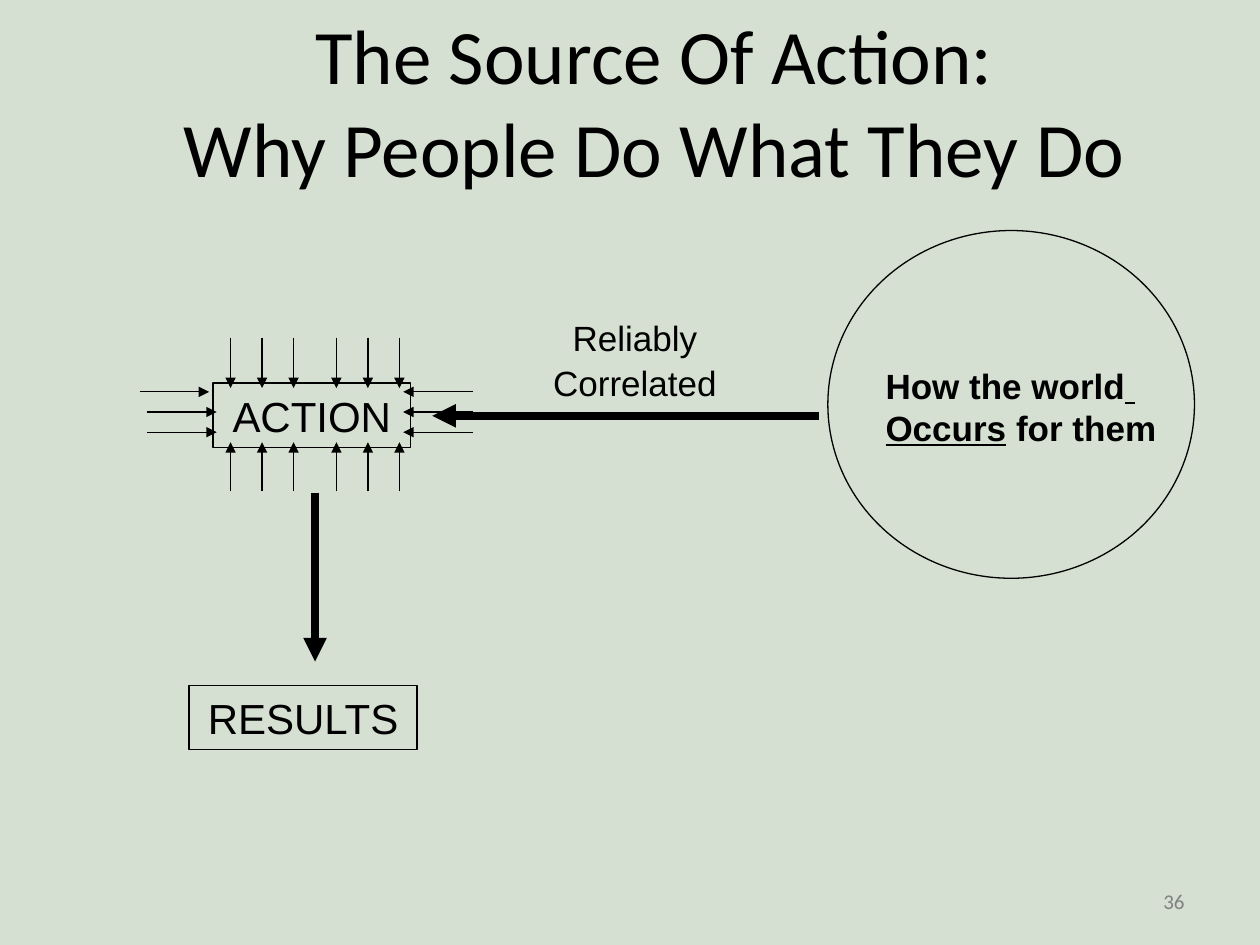
from lxml import etree
from pptx import Presentation
from pptx.dml.color import RGBColor
from pptx.enum import shapes, text
from pptx.oxml.ns import qn
from pptx.util import Inches, Pt

BLACK = "000000"
GREY = "808080"
BACKGROUND = "D5E0D2"
CENTER = text.PP_ALIGN.CENTER


def color(value):
    return RGBColor.from_string(value)


def place(left, top, width, height):
    return [Inches(value) for value in (left, top, width, height)]


def write(box, lines, size, font="Arial", ink=BLACK, align=CENTER,
          anchor=text.MSO_ANCHOR.MIDDLE):
    """Fill a box with one paragraph a line, all in one format."""
    frame = box.text_frame
    frame.word_wrap = True
    frame.auto_size = text.MSO_AUTO_SIZE.NONE
    frame.vertical_anchor = anchor
    frame.text = lines
    for para in frame.paragraphs:
        para.alignment = align
        for span in para.runs:
            span.font.size = Pt(size)
            span.font.name = font
            span.font.color.rgb = color(ink)
    return frame


def add_outline(page, kind, left, top, width, height):
    shape = page.shapes.add_shape(kind, *place(left, top, width, height))
    shape.shadow.inherit = False
    shape.fill.background()
    shape.line.color.rgb = color(BLACK)
    shape.line.width = Pt(0.75)
    return shape


def add_arrow(page, start, end, weight=0.75):
    arrow = page.shapes.add_connector(
        shapes.MSO_CONNECTOR.STRAIGHT,
        *[Inches(value) for value in (*start, *end)])
    arrow.line.color.rgb = color(BLACK)
    arrow.line.width = Pt(weight)
    etree.SubElement(arrow.line._get_or_add_ln(), qn("a:tailEnd"), type="triangle")
    etree.SubElement(arrow._element.spPr, qn("a:effectLst"))


def add_pressure_arrows(page):
    """Small arrows that press on the action box from every side."""
    for x in (1.83, 2.08, 2.33, 2.67, 2.92, 3.17):
        add_arrow(page, (x, 2.68), (x, 3.08))
        add_arrow(page, (x, 3.9), (x, 3.51))
    for y, left in ((3.11, 1.11), (3.27, 1.17), (3.43, 1.17)):
        add_arrow(page, (left, y), (left + 0.55, y))
        add_arrow(page, (3.75, y), (3.2, y))


def add_world_view(page):
    """Circle with the statement about how the world occurs."""
    add_outline(page, shapes.MSO_SHAPE.OVAL, 6.57, 1.83, 2.91, 2.76)
    box = page.shapes.add_textbox(*place(6.93, 2.84, 2.5, 0.8))
    frame = write(box, "How the world\nOccurs", 20, align=text.PP_ALIGN.LEFT,
                  anchor=text.MSO_ANCHOR.TOP)
    first, second = frame.paragraphs
    for para, ending in ((first, " "), (second, " for them")):
        span = para.add_run()
        span.text = ending
        span.font.size = Pt(20)
        span.font.name = "Arial"
        span.font.color.rgb = color(BLACK)
        for part in para.runs:
            part.font.bold = True
    first.runs[1].font.underline = True
    second.runs[0].font.underline = True


def main():
    deck = Presentation()
    deck.slide_width, deck.slide_height = Inches(10), Inches(7.5)
    page = deck.slides.add_slide(deck.slide_layouts[5])
    page.background.fill.solid()
    page.background.fill.fore_color.rgb = color(BACKGROUND)

    # Title and page number
    title = page.shapes.title
    title.left, title.top, title.width, title.height = place(1.14, 0.17, 8.11, 1.25)
    write(title, "The Source Of Action:\vWhy People Do What They Do", 44, "Calibri")
    number = page.shapes.add_textbox(*place(7.17, 6.95, 2.33, 0.4))
    write(number, "36", 12, "Calibri", GREY, text.PP_ALIGN.RIGHT)

    # Action leads to results
    for label, spot in (("RESULTS", (1.5, 5.44, 1.81, 0.51)),
                        ("ACTION", (1.69, 3.04, 1.57, 0.51))):
        write(add_outline(page, shapes.MSO_SHAPE.RECTANGLE, *spot), label, 24)
    add_arrow(page, (2.5, 3.91), (2.5, 5.25), 4.5)
    add_pressure_arrows(page)

    # Link from the world view to action
    add_arrow(page, (6.5, 3.3), (3.43, 3.3), 4.5)
    link = page.shapes.add_textbox(*place(3.9, 2.57, 2.28, 0.7))
    frame = write(link, "Reliably\nCorrelated", 20, anchor=text.MSO_ANCHOR.TOP)
    for para in frame.paragraphs:
        para.line_spacing = 0.65
        para.space_before = Pt(10)
    add_world_view(page)

    deck.save("out.pptx")


if __name__ == "__main__":
    main()
